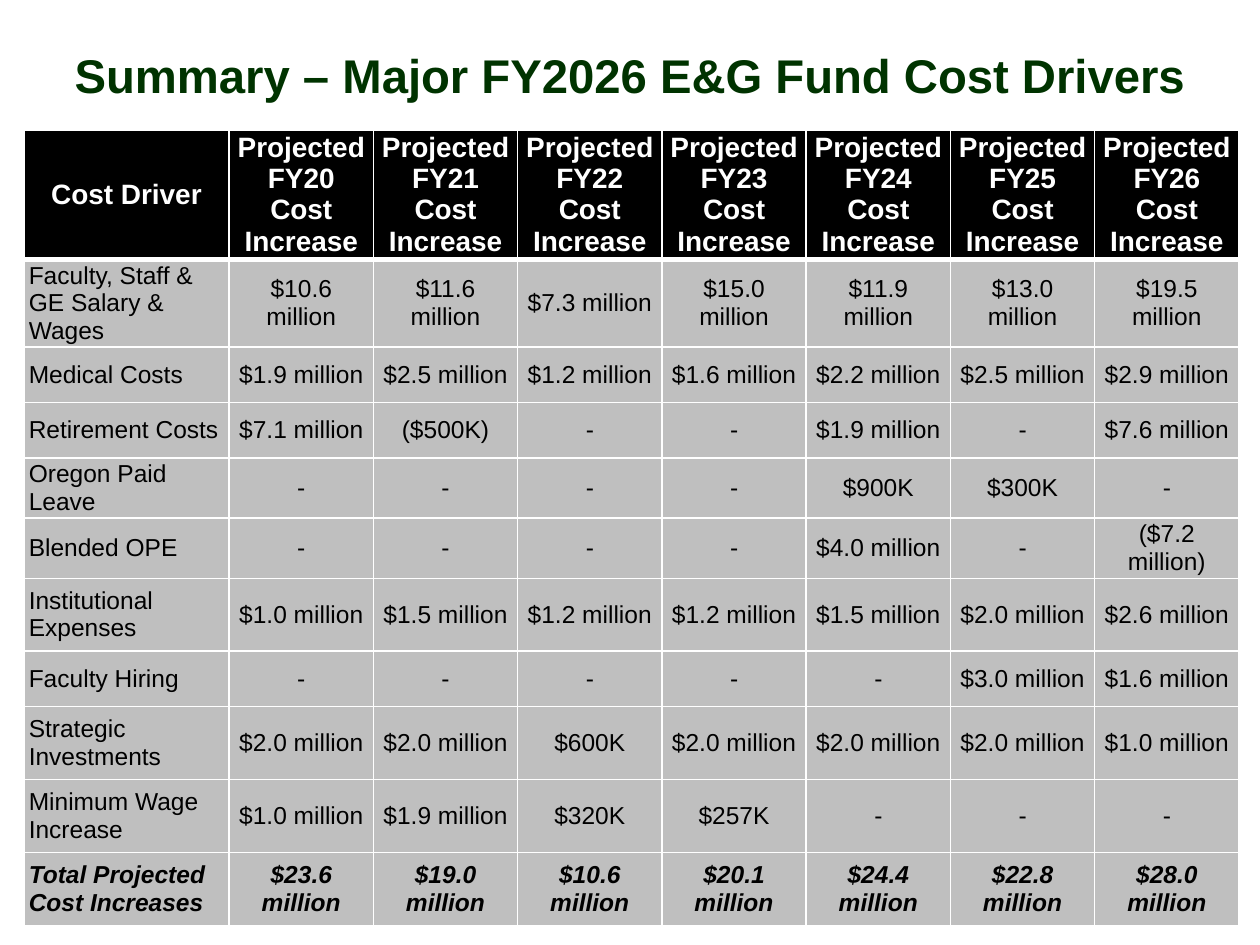
from lxml import etree
from pptx import Presentation
from pptx.dml.color import RGBColor
from pptx.enum.text import MSO_ANCHOR, MSO_AUTO_SIZE, PP_ALIGN
from pptx.oxml.ns import qn
from pptx.util import Cm, Pt

MIDDLE = MSO_ANCHOR.MIDDLE
NO_FIT = MSO_AUTO_SIZE.NONE
LEFT, CENTER = PP_ALIGN.LEFT, PP_ALIGN.CENTER

FONT = "Arial"
WHITE, BLACK, GREY, GREEN = "FFFFFF", "000000", "BFBFBF", "003300"

HEAD = ["Cost Driver"] + [f"Projected FY{y} Cost Increase" for y in range(20, 27)]

# Amounts: M stands for million, K for thousand
COSTS = [
    ("Faculty, Staff & GE Salary & Wages", "$10.6M $11.6M $7.3M $15.0M $11.9M $13.0M $19.5M"),
    ("Medical Costs", "$1.9M $2.5M $1.2M $1.6M $2.2M $2.5M $2.9M"),
    ("Retirement Costs", "$7.1M ($500K) - - $1.9M - $7.6M"),
    ("Oregon Paid Leave", "- - - - $900K $300K -"),
    ("Blended OPE", "- - - - $4.0M - ($7.2M)"),
    ("Institutional Expenses", "$1.0M $1.5M $1.2M $1.2M $1.5M $2.0M $2.6M"),
    ("Faculty Hiring", "- - - - - $3.0M $1.6M"),
    ("Strategic Investments", "$2.0M $2.0M $600K $2.0M $2.0M $2.0M $1.0M"),
    ("Minimum Wage Increase", "$1.0M $1.9M $320K $257K - - -"),
    ("Total Projected Cost Increases", "$23.6M $19.0M $10.6M $20.1M $24.4M $22.8M $28.0M"),
]
TALL, LOW = 1.47, 1.12
ROWS = [2.41, TALL, LOW, LOW, LOW, LOW, TALL, LOW, TALL, TALL, TALL]


def color(code):
    return RGBColor.from_string(code)


def style(frame, size, code, align, bold=False, slant=False):
    for para in frame.paragraphs:
        para.alignment = align
        for run in para.runs:
            font = run.font
            font.name, font.size = FONT, Pt(size)
            font.bold, font.italic = bold, slant
            font.color.rgb = color(code)


def border(cell, top, base):
    """Draw white lines on all four sides; they must come before the fill."""
    props = cell._tc.get_or_add_tcPr()
    sides = [("lnL", 1), ("lnR", 1), ("lnT", top), ("lnB", base)]
    for i, (side, width) in enumerate(sides):
        line = etree.Element(qn(f"a:{side}"), w=str(Pt(width)))
        fill = etree.SubElement(line, qn("a:solidFill"))
        etree.SubElement(fill, qn("a:srgbClr"), val=WHITE)
        props.insert(i, line)


def add_title(slide, left, top, width, height):
    title = slide.shapes.title
    title.left, title.top = Cm(left), Cm(top)
    title.width, title.height = Cm(width), Cm(height)
    frame = title.text_frame
    frame.text = "Summary – Major FY2026 E&G Fund Cost Drivers"
    frame.word_wrap, frame.auto_size = True, NO_FIT
    frame.vertical_anchor = MIDDLE
    frame.margin_left = frame.margin_right = Cm(0.18)
    frame.margin_top = frame.margin_bottom = Cm(0.1)
    style(frame, 27, GREEN, CENTER, bold=True)


def add_costs(slide, left, top, width, first):
    """Place the cost table; the years share the width after the first column."""
    data = [HEAD]
    for name, sums in COSTS:
        data.append([name] + [s.replace("M", " million") for s in sums.split()])
    count = len(HEAD)
    table = slide.shapes.add_table(
        len(data), count, Cm(left), Cm(top), Cm(width), Cm(sum(ROWS))).table

    year = (width - first) / (count - 1)
    for c, col in enumerate(table.columns):
        col.width = Cm(year if c else first)
    for row, high in zip(table.rows, ROWS):
        row.height = Cm(high)

    for r, texts in enumerate(data):
        head, total = r == 0, r == len(data) - 1
        for c, text in enumerate(texts):
            cell = table.cell(r, c)
            cell.text_frame.text = text
            cell.vertical_anchor = MIDDLE
            cell.margin_left = cell.margin_right = Cm(0.1)
            cell.margin_top = cell.margin_bottom = Cm(0.05)
            cell.fill.solid()
            cell.fill.fore_color.rgb = color(BLACK if head else GREY)
            border(cell, 3 if r == 1 else 1, 3 if head else 1)
            style(cell.text_frame, 16 if head else 14, WHITE if head else BLACK,
                  CENTER if head or c else LEFT, head or total, total)


def main():
    deck = Presentation()
    deck.slide_width, deck.slide_height = Cm(25.4), Cm(19.05)
    slide = deck.slides.add_slide(deck.slide_layouts[5])
    add_costs(slide, 0.48, 2.62, 24.5, 4.14)
    add_title(slide, 0.56, 0.64, 24.28, 1.73)
    deck.save("out.pptx")


if __name__ == "__main__":
    main()
